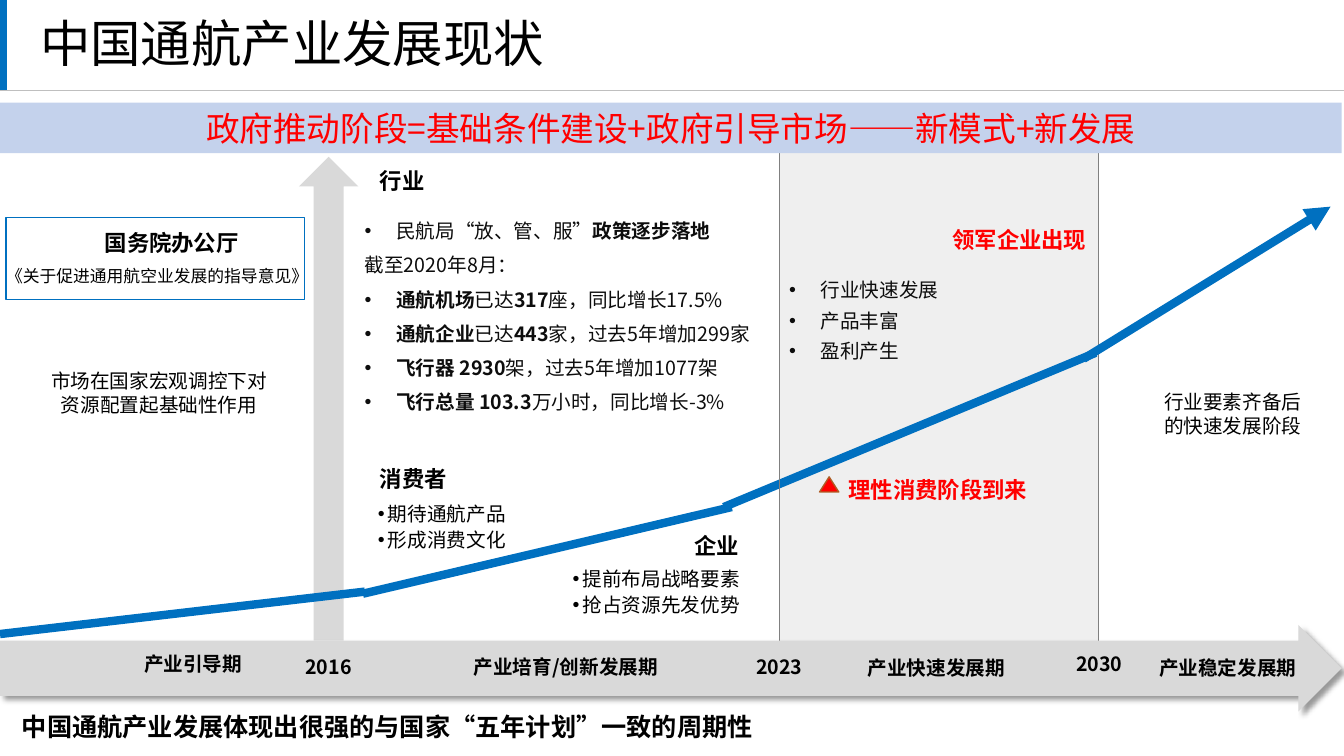
from lxml import etree
from pptx import Presentation
from pptx.dml.color import RGBColor
from pptx.enum.shapes import MSO_CONNECTOR, MSO_SHAPE as SHAPE
from pptx.enum.text import MSO_ANCHOR, PP_ALIGN as ALIGN
from pptx.oxml.ns import qn
from pptx.util import Pt

FONT = "Noto Sans CJK SC"
BLACK = RGBColor(0x00, 0x00, 0x00)
INK = RGBColor(0x0D, 0x0D, 0x0D)
RED = RGBColor(0xFF, 0x00, 0x00)
BLUE = RGBColor(0x00, 0x70, 0xC0)
BROWN = RGBColor(0xAF, 0x5C, 0x24)
BANNER_BLUE = RGBColor(0xC4, 0xD2, 0xEC)
ARROW_GRAY = RGBColor(0xD9, 0xD9, 0xD9)
RULE_GRAY = RGBColor(0xBF, 0xBF, 0xBF)
DIVIDER_GRAY = RGBColor(0x80, 0x80, 0x80)

prs = Presentation()
prs.slide_width, prs.slide_height = Pt(960), Pt(540)
slide = prs.slides.add_slide(prs.slide_layouts[6])


def add_shape(kind, box, fill=None, line=None, width=0.75):
    shape = slide.shapes.add_shape(kind, *map(Pt, box))
    shape.shadow.inherit = False
    if fill is None:
        shape.fill.background()
    else:
        shape.fill.solid()
        shape.fill.fore_color.rgb = fill
    if line is None:
        shape.line.fill.background()
    else:
        shape.line.color.rgb = line
        shape.line.width = Pt(width)
    return shape


def add_text(box, paragraphs, size=14, color=BLACK, bold=False, align=ALIGN.LEFT,
             spacing=1.0, before=0, hang=0, anchor=MSO_ANCHOR.TOP, plain=()):
    """A paragraph is a string or a list of (text, bold) runs; plain ones get no bullet."""
    frame = slide.shapes.add_textbox(*map(Pt, box)).text_frame
    frame.word_wrap = True
    frame.vertical_anchor = anchor
    for i, runs in enumerate(paragraphs):
        para = frame.add_paragraph() if i else frame.paragraphs[0]
        if hang and i not in plain:
            props = para._p.get_or_add_pPr()
            props.set("marL", str(Pt(hang)))
            props.set("indent", str(-Pt(hang)))
            etree.SubElement(props, qn("a:buFont"), typeface="Arial")
            etree.SubElement(props, qn("a:buChar"), char="•")
        para.alignment = align
        para.line_spacing = spacing
        para.space_before = Pt(before if i else 0)
        for text, strong in [(runs, bold)] if isinstance(runs, str) else runs:
            run = para.add_run()
            run.text = text
            run.font.name = FONT
            run.font.size = Pt(size)
            run.font.bold = strong
            run.font.color.rgb = color
            etree.SubElement(run.font._element, qn("a:ea"), typeface=FONT)


# Backgrounds: title mark, fast-growth zone, 2016 arrow
add_shape(SHAPE.RECTANGLE, (0, 0, 5, 64.8), BLUE)
growth_zone = add_shape(SHAPE.RECTANGLE, (556.5, 98.6, 228.3, 365), RULE_GRAY)
zone_color = growth_zone._element.spPr.find(qn("a:solidFill"))[0]
etree.SubElement(zone_color, qn("a:alpha"), val="24000")
add_shape(SHAPE.UP_ARROW, (213.5, 112, 42.5, 345.6), ARROW_GRAY)

# Title rule, growth curve and period dividers
lines = [
    (0, 64.8, 960, 64.8, RULE_GRAY, 0.75),
    (0, 452.9, 260.6, 422.6, BLUE, 6),
    (259.2, 424.1, 522.7, 362.2, BLUE, 6),
    (517, 362.2, 782.6, 252, BLUE, 6),
    (556.5, 103.7, 556.5, 470, DIVIDER_GRAY, 0.5),
    (784.8, 98.6, 784.8, 465, DIVIDER_GRAY, 0.5),
    (774, 256.3, 950.4, 147.6, BLUE, 6),
]
for x1, y1, x2, y2, color, width in lines:
    segment = slide.shapes.add_connector(MSO_CONNECTOR.STRAIGHT, Pt(x1), Pt(y1), Pt(x2), Pt(y2))
    segment.line.color.rgb = color
    segment.line.width = Pt(width)
    etree.SubElement(segment._element.spPr, qn("a:effectLst"))
# The last segment ends in the arrowhead
etree.SubElement(segment.line._get_or_add_ln(), qn("a:tailEnd"), type="triangle")

# Timeline arrow with its shadow
timeline = add_shape(SHAPE.RIGHT_ARROW, (0, 446.4, 958.3, 61.9), ARROW_GRAY)
timeline.adjustments[0] = 0.637
shadow = etree.SubElement(timeline._element.spPr.find(qn("a:effectLst")), qn("a:outerShdw"),
                          blurRad=str(Pt(4)), dist=str(Pt(3)), dir="2700000")
shadow_color = etree.SubElement(shadow, qn("a:srgbClr"), val="000000")
etree.SubElement(shadow_color, qn("a:alpha"), val="40000")

# Timeline labels
for x, y, w, label, align in [
    (95.8, 462.2, 108.7, "产业引导期", ALIGN.LEFT),
    (199.4, 464.4, 70.6, "2016", ALIGN.CENTER),
    (321.8, 464.4, 164.9, "产业培育/创新发展期", ALIGN.CENTER),
    (524.2, 464, 64.8, "2023", ALIGN.CENTER),
    (612.7, 465, 137.5, "产业快速发展期", ALIGN.LEFT),
    (751.7, 462.2, 67, "2030", ALIGN.CENTER),
    (820.8, 465, 128.2, "产业稳定发展期", ALIGN.LEFT),
]:
    add_text((x, y, w, 24.5), [label], bold=True, align=align)

# Title, banner and conclusion
add_text((21.6, 8.6, 519, 49), ["中国通航产业发展现状"], 36, spacing=0.9, anchor=MSO_ANCHOR.MIDDLE)
banner = (0, 73.4, 958.3, 36)
add_shape(SHAPE.RECTANGLE, banner, BANNER_BLUE)
add_text(banner, ["政府推动阶段=基础条件建设+政府引导市场——新模式+新发展"], 24, RED,
         align=ALIGN.CENTER, anchor=MSO_ANCHOR.MIDDLE)
add_text((8.6, 504.7, 940.3, 28.8),
         ["中国通航产业发展体现出很强的与国家“五年计划”一致的周期性"], 18, bold=True)

# Guidance period
add_shape(SHAPE.RECTANGLE, (4.3, 155.5, 213.1, 58.3), line=BLUE)
add_text((-7.9, 186.5, 240.5, 22.3), ["《关于促进通用航空业发展的指导意见》"], 12, align=ALIGN.CENTER)
add_text((23, 260, 181.4, 41.8), ["市场在国家宏观调控下对资源配置起基础性作用"], align=ALIGN.CENTER)

# Section headings
for x, y, w, heading, align in [
    (67.7, 159.8, 131, "国务院办公厅", ALIGN.LEFT),
    (264.2, 116, 120.2, "行业", ALIGN.LEFT),
    (264.2, 329, 120.2, "消费者", ALIGN.LEFT),
    (414.7, 376.6, 120.2, "企业", ALIGN.RIGHT),
]:
    add_text((x, y, w, 27.4), [heading], 16, bold=True, align=align)

# Cultivation period: industry, consumers, companies
add_text((253.4, 151.2, 327.6, 148.3), [
    [("民航局“放、管、服”", False), ("政策逐步落地", True)],
    "截至2020年8月：",
    [("通航机场", True), ("已达", False), ("317", True), ("座，同比增长17.5%", False)],
    [("通航企业", True), ("已达", False), ("443", True), ("家，过去5年增加299家", False)],
    [("飞行器 2930", True), ("架，过去5年增加1077架", False)],
    [("飞行总量 103.3", True), ("万小时，同比增长-3%", False)],
], color=INK, spacing=1.1, before=6, hang=22.5, plain=(1,))
add_text((262.8, 353.5, 150.5, 45.4), ["期待通航产品", "形成消费文化"],
         align=ALIGN.JUSTIFY, spacing=1.1, hang=7.2)
add_text((354.2, 399.6, 181.4, 45.4), ["提前布局战略要素", "抢占资源先发优势"],
         align=ALIGN.RIGHT, spacing=1.1, hang=7.2)

# Fast-growth period
add_text((556.5, 190, 170, 74.2), ["行业快速发展", "产品丰富", "盈利产生"],
         color=INK, spacing=1.3, hang=22.5)
add_text((673.2, 152, 112, 33), ["领军企业出现"], 16, RED, True, spacing=1.3)
add_text((599, 330.5, 145, 33), ["理性消费阶段到来"], 16, RED, True, spacing=1.3)
add_shape(SHAPE.ISOSCELES_TRIANGLE, (585.4, 340.6, 13.7, 10.8), RED, BROWN, 1)

# Stable period
add_text((824.4, 275, 114.5, 41.8), ["行业要素齐备后的快速发展阶段"])

prs.save("out.pptx")
